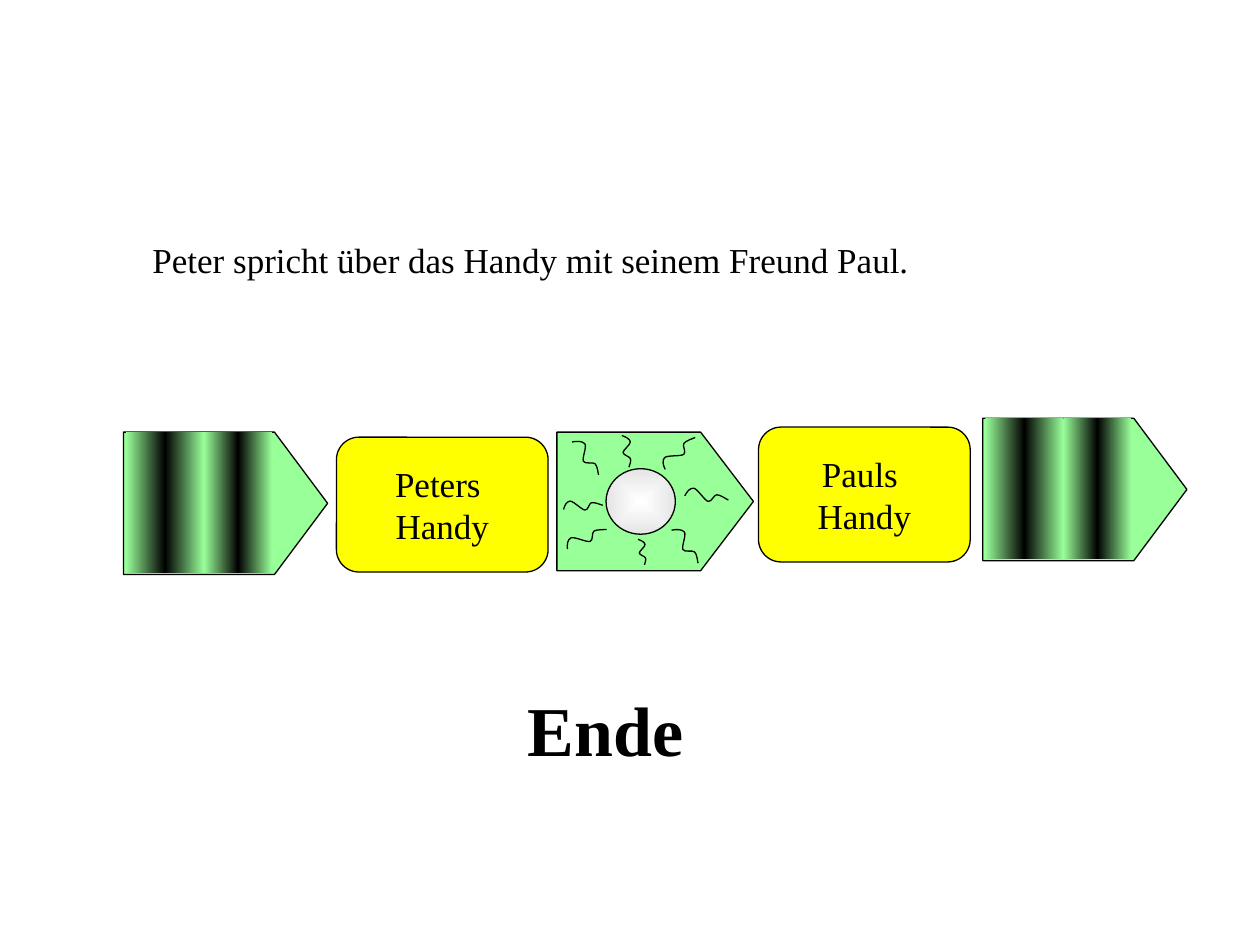
from dataclasses import dataclass
from typing import NamedTuple

from lxml.etree import SubElement
from pptx import Presentation
from pptx.dml.color import RGBColor
from pptx.enum.shapes import MSO_SHAPE
from pptx.enum.text import MSO_ANCHOR, MSO_AUTO_SIZE, PP_ALIGN
from pptx.oxml.ns import qn
from pptx.util import Inches, Pt


@dataclass(frozen=True)
class Theme:
    font: str = "Times New Roman"
    ink: str = "000000"
    green: str = "99FF99"
    yellow: str = "FFFF00"
    white: str = "FFFFFF"
    grey: str = "E5E5E5"
    body: int = 20
    ending: int = 40
    line: float = 0.75


class Box(NamedTuple):
    x: float
    y: float
    w: float
    h: float

    def emu(self) -> list[int]:
        return [Inches(v) for v in self]


class Phone(NamedTuple):
    owner: str
    box: Box


class Wave(NamedTuple):
    box: Box
    rotation: float = 0


T = Theme()
SOUND_ARROWS = [(0.98, 3.43), (7.8, 3.32)]
PHONES = [
    Phone("Pauls ", Box(6.02, 3.39, 1.68, 1.07)),
    Phone("Peters ", Box(2.67, 3.47, 1.68, 1.07)),
]
WAVE_CURVE = [
    (0, 3), (20, 0), (40, 0), (49, 9), (56, 19), (37, 51), (43, 60),
    (50, 69), (78, 61), (87, 67), (96, 73), (98, 93), (100, 100),
]
WAVES = [
    Wave(Box(5.33, 4.2, 0.21, 0.27)),
    Wave(Box(5.3, 3.45, 0.19, 0.3), 256.3),
    Wave(Box(5.51, 3.8, 0.19, 0.3), 308.6),
    Wave(Box(4.56, 4.13, 0.19, 0.3), 276.4),
    Wave(Box(5.02, 4.3, 0.14, 0.16), 27.9),
    Wave(Box(4.54, 3.5, 0.21, 0.27)),
    Wave(Box(4.54, 3.89, 0.17, 0.27), 296.8),
    Wave(Box(4.88, 3.48, 0.17, 0.2), 28.8),
]


def add_run(p, text: str, size: int = T.body, bold: bool = False) -> None:
    r = p.add_run()
    r.text = text
    r.font.name = T.font
    r.font.size = Pt(size)
    r.font.bold = bold
    r.font.color.rgb = RGBColor.from_string(T.ink)


def outline(sp) -> None:
    sp.shadow.inherit = False
    sp.line.color.rgb = RGBColor.from_string(T.ink)
    sp.line.width = Pt(T.line)


def add_solid(shapes, kind: MSO_SHAPE, box: Box, fill: str, adj: float | None = None):
    sp = shapes.add_shape(kind, *box.emu())
    outline(sp)
    sp.fill.solid()
    sp.fill.fore_color.rgb = RGBColor.from_string(fill)
    if adj is not None:
        sp.adjustments[0] = adj
    return sp


def set_gradient(sp, colors: list[str], radial: bool = False) -> None:
    sp.fill.gradient()
    grad = sp._element.spPr.find(qn("a:gradFill"))
    for child in list(grad):
        grad.remove(child)
    stops = SubElement(grad, qn("a:gsLst"))
    for i, color in enumerate(colors):
        gs = SubElement(stops, qn("a:gs"), pos=str(100000 * i // (len(colors) - 1)))
        SubElement(gs, qn("a:srgbClr"), val=color)
    if radial:
        path = SubElement(grad, qn("a:path"), {"path": "shape"})
        SubElement(path, qn("a:fillToRect"), dict.fromkeys("ltrb", "50000"))
    else:
        SubElement(grad, qn("a:lin"), ang="0", scaled="0")


def smooth(sp) -> None:
    lines = list(sp._element.iter(qn("a:lnTo")))
    outline_path = lines[0].getparent()
    for i in range(0, len(lines), 3):
        curve = SubElement(outline_path, qn("a:cubicBezTo"))
        for line in lines[i:i + 3]:
            curve.append(line[0])
            outline_path.remove(line)


def add_wave(shapes, wave: Wave) -> None:
    x, y, w, h = wave.box.emu()
    fb = shapes.build_freeform(*WAVE_CURVE[0], scale=(w / 100, h / 100))
    fb.add_line_segments(WAVE_CURVE[1:], close=False)
    sp = fb.convert_to_shape(x, y)
    smooth(sp)
    sp.rotation = wave.rotation
    sp.fill.background()
    outline(sp)


def add_radio_arrow(s) -> None:
    shapes = s.shapes.add_group_shape().shapes
    add_solid(shapes, MSO_SHAPE.PENTAGON, Box(4.42, 3.43, 1.56, 1.1), T.green, 0.381)
    sender = add_solid(shapes, MSO_SHAPE.OVAL, Box(4.81, 3.72, 0.55, 0.52), T.white)
    set_gradient(sender, [T.white, T.grey], radial=True)
    for wave in WAVES:
        add_wave(shapes, wave)


def add_sound_arrow(s, x: float, y: float) -> None:
    shapes = s.shapes.add_group_shape().shapes
    add_solid(shapes, MSO_SHAPE.PENTAGON, Box(x, y, 1.62, 1.13), T.green, 0.373)
    for dx, w in ((0.02, 0.62), (0.64, 0.54)):
        band = add_solid(shapes, MSO_SHAPE.RECTANGLE, Box(x + dx, y, w, 1.12), T.green)
        set_gradient(band, [T.green, T.ink, T.green])
        band.line.fill.background()


def add_phone(s, phone: Phone) -> None:
    sp = add_solid(s.shapes, MSO_SHAPE.ROUNDED_RECTANGLE, phone.box, T.yellow, 0.167)
    tf = sp.text_frame
    tf.word_wrap = False
    tf.vertical_anchor = MSO_ANCHOR.MIDDLE
    p = tf.paragraphs[0]
    p.alignment = PP_ALIGN.CENTER
    add_run(p, phone.owner)
    p.add_line_break()
    add_run(p, "Handy")


def add_title(s) -> None:
    sp = s.shapes.title
    sp.left, sp.top, sp.width, sp.height = Box(1.11, 1.31, 8.5, 1.5).emu()
    tf = sp.text_frame
    tf.vertical_anchor = MSO_ANCHOR.MIDDLE
    p = tf.paragraphs[0]
    p.alignment = PP_ALIGN.LEFT
    add_run(p, "Peter spricht über das Handy mit seinem Freund Paul.")


def add_ending(s) -> None:
    tf = s.shapes.add_textbox(*Box(4.09, 5.4, 1.74, 0.77).emu()).text_frame
    tf.word_wrap = True
    tf.auto_size = MSO_AUTO_SIZE.SHAPE_TO_FIT_TEXT
    add_run(tf.paragraphs[0], "Ende", T.ending, bold=True)


def main() -> None:
    prs = Presentation()
    prs.slide_width, prs.slide_height = Inches(10), Inches(7.5)
    s = prs.slides.add_slide(prs.slide_layouts[5])
    add_title(s)
    add_radio_arrow(s)
    for x, y in SOUND_ARROWS:
        add_sound_arrow(s, x, y)
    for phone in PHONES:
        add_phone(s, phone)
    add_ending(s)
    prs.save("out.pptx")


if __name__ == "__main__":
    main()
